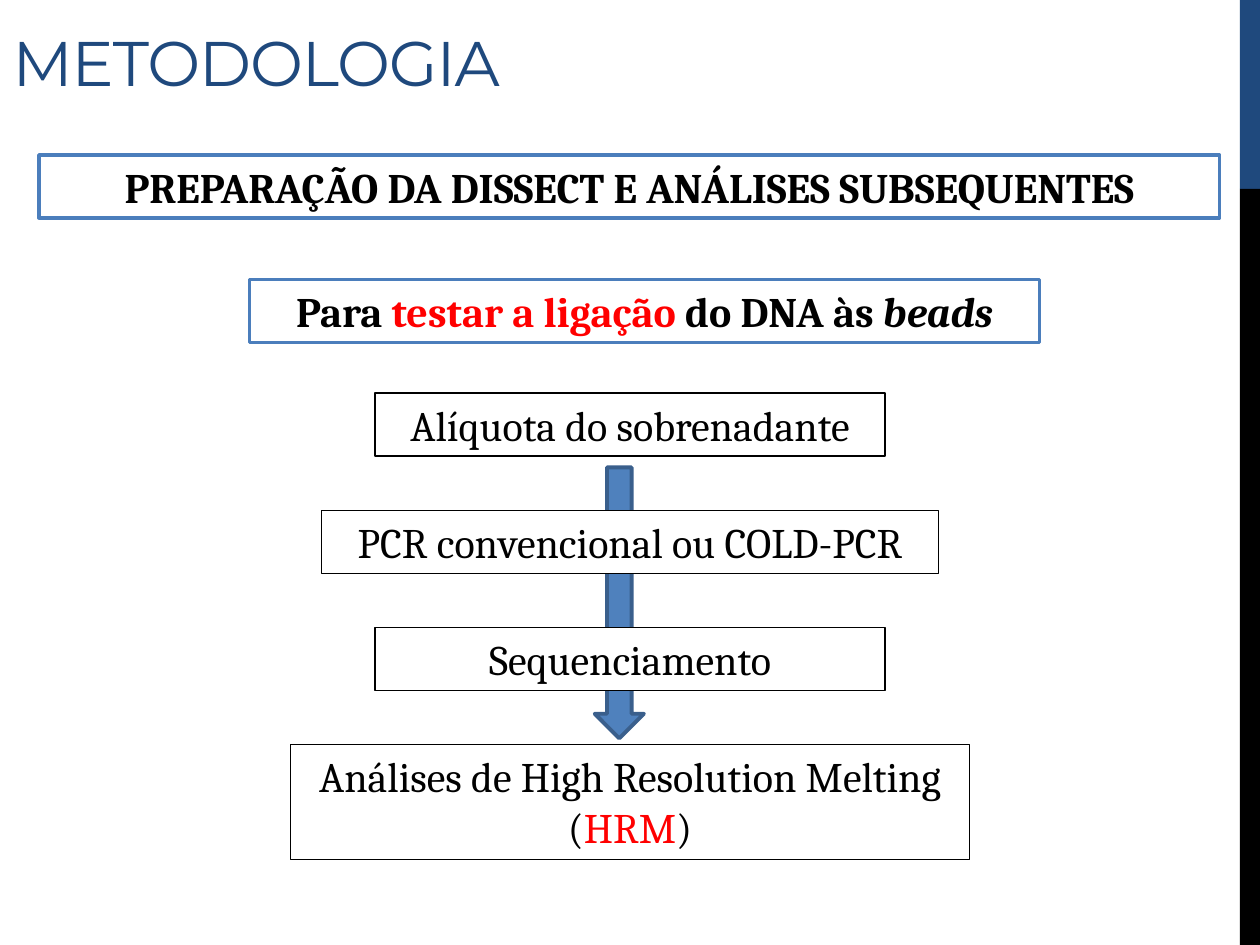
from pptx import Presentation
from pptx.dml.color import RGBColor
from pptx.enum.shapes import MSO_SHAPE
from pptx.enum.text import MSO_ANCHOR, MSO_AUTO_SIZE, PP_ALIGN
from pptx.util import Inches, Pt


class Theme:
    navy = RGBColor.from_string("1F497D")
    blue = RGBColor.from_string("4F81BD")
    edge = RGBColor.from_string("4B7EBC")
    steel = RGBColor.from_string("3A5F8C")
    black = RGBColor.from_string("000000")
    white = RGBColor.from_string("FFFFFF")
    red = RGBColor.from_string("FF0000")
    head = {"name": "Montserrat", "size": Pt(36), "bold": False}
    text = {"name": "Cambria", "size": Pt(24)}


def write(para, runs, base):
    for words, color, extra in runs:
        run = para.add_run()
        run.text = words
        run.font.color.rgb = color
        for key, val in {**base, **extra}.items():
            setattr(run.font, key, val)


def draw(kind, place, fill=None, line=None, width=0, runs=()):
    shape = slide.shapes.add_shape(kind, *map(Inches, place))
    shape.shadow.inherit = False
    if fill is None:
        shape.fill.background()
    else:
        shape.fill.solid()
        shape.fill.fore_color.rgb = fill
    if line is None:
        shape.line.fill.background()
    else:
        shape.line.color.rgb = line
        shape.line.width = Pt(width)
    if runs:
        frame = shape.text_frame
        look = {"word_wrap": True, "vertical_anchor": MSO_ANCHOR.TOP,
                "auto_size": MSO_AUTO_SIZE.SHAPE_TO_FIT_TEXT}
        for key, val in look.items():
            setattr(frame, key, val)
        para = frame.paragraphs[0]
        para.alignment = PP_ALIGN.CENTER
        write(para, runs, Theme.text)


deck = Presentation()
deck.slide_width, deck.slide_height = Inches(10), Inches(7.5)
slide = deck.slides.add_slide(deck.slide_layouts[5])

for top, high, color in ((0, 1.5, Theme.navy), (1.5, 6, Theme.black)):
    draw(MSO_SHAPE.RECTANGLE, (9.84, top, 0.16, high), color)

title = slide.shapes.title
place = {"left": 0, "top": 0.11, "width": 9.8, "height": 0.73}
for key, val in place.items():
    setattr(title, key, Inches(val))
frame = title.text_frame
look = {"vertical_anchor": MSO_ANCHOR.BOTTOM, "auto_size": MSO_AUTO_SIZE.NONE}
for key, val in look.items():
    setattr(frame, key, val)
para = frame.paragraphs[0]
para.alignment = PP_ALIGN.LEFT
write(para, [("METODOLOGIA", Theme.navy, {})], Theme.head)
para.runs[0]._r.get_or_add_rPr().set("spc", "-60")

bold = {"bold": True}
heads = (
    ((0.31, 1.23, 9.37, 0.5),
     [("PREPARAÇÃO DA DISSECT E ANÁLISES SUBSEQUENTES", Theme.black, bold)]),
    ((1.98, 2.22, 6.27, 0.5),
     [("Para ", Theme.black, bold),
      ("testar a ligação", Theme.red, bold),
      (" do DNA às ", Theme.black, bold),
      ("beads", Theme.black, {"bold": True, "italic": True})]),
)
for place, runs in heads:
    draw(MSO_SHAPE.RECTANGLE, place, None, Theme.edge, 2, runs)

draw(MSO_SHAPE.DOWN_ARROW, (4.72, 3.71, 0.39, 2.15),
     Theme.blue, Theme.steel, 2.25)

steps = (
    (4.05, 0.5, None, [("Alíquota do sobrenadante", Theme.black, {})]),
    (4.9, 0.5, Theme.white, [("PCR convencional ou COLD-PCR", Theme.black, {})]),
    (4.05, 0.5, Theme.white, [("Sequenciamento", Theme.black, {})]),
    (5.39, 0.91, None,
     [("Análises de High Resolution Melting (", Theme.black, {}),
      ("HRM", Theme.red, {}),
      (")", Theme.black, {})]),
)
mid, start, pitch = 5, 3.12, 0.93
for row, (wide, high, fill, runs) in enumerate(steps):
    place = (mid - wide / 2, start + row * pitch, wide, high)
    draw(MSO_SHAPE.RECTANGLE, place, fill, Theme.black, 0.75, runs)

deck.save("out.pptx")
